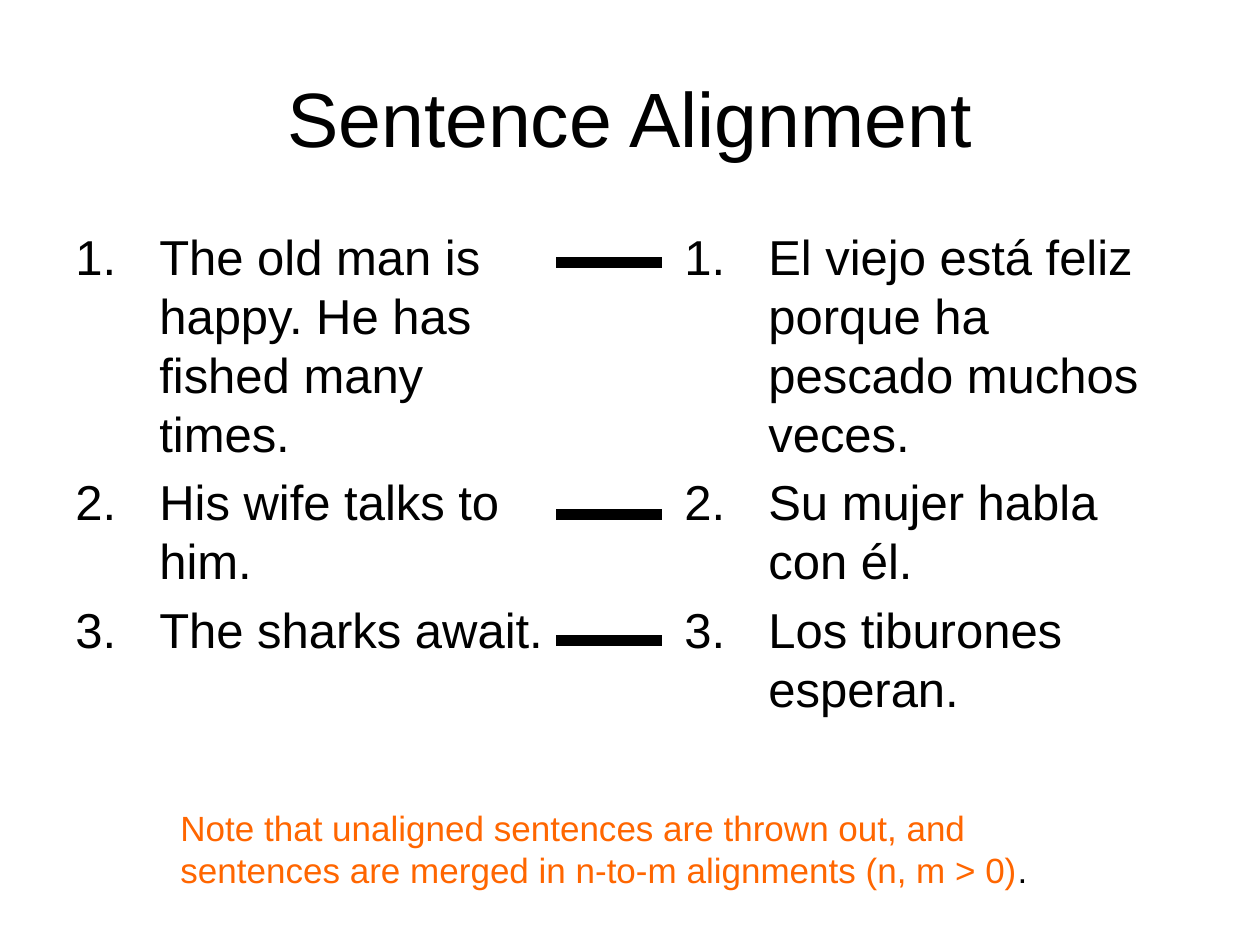
from lxml import etree
from pptx import Presentation
from pptx.dml.color import RGBColor
from pptx.enum.shapes import MSO_CONNECTOR
from pptx.enum.text import MSO_ANCHOR, PP_ALIGN
from pptx.oxml.ns import qn
from pptx.util import Pt

STRAIGHT = MSO_CONNECTOR.STRAIGHT
TOP, MIDDLE = MSO_ANCHOR.TOP, MSO_ANCHOR.MIDDLE
LEFT, CENTER = PP_ALIGN.LEFT, PP_ALIGN.CENTER
FONT, BLACK, ORANGE = "Arial", "000000", "FF6600"

# Content: each paragraph is a list of (text, colour) runs
TITLE = [[("Sentence Alignment", BLACK)]]
ENGLISH = [
    "The old man is happy. He has fished many times.",
    "His wife talks to him.",
    "The sharks await.",
]
SPANISH = [
    "El viejo está feliz porque ha pescado muchos veces.",
    "Su mujer habla con él.",
    "Los tiburones esperan.",
]
NOTE = [
    [("Note that unaligned sentences are thrown out, and", ORANGE)],
    [("sentences are merged in n-to-m alignments (n, m > 0)", ORANGE), (".", BLACK)],
]

# Layout in points
LIST_TOP, LIST_WIDTH, LIST_HEIGHT = 126, 288, 356.4
LIST_SIZE, LIST_INDENT = 28, 48
COLUMNS = [(36, ENGLISH), (384, SPANISH)]
LINK_LEFT, LINK_RIGHT = 318, 378
LINK_HEIGHTS = [150, 294, 366]


def color(hex_string):
    return RGBColor.from_string(hex_string)


def add_text(slide, box, paragraphs, size, align=LEFT, anchor=TOP, wrap=True):
    shape = slide.shapes.add_textbox(*map(Pt, box))
    frame = shape.text_frame
    frame.word_wrap = wrap
    frame.vertical_anchor = anchor
    for index, runs in enumerate(paragraphs):
        paragraph = frame.paragraphs[0] if index == 0 else frame.add_paragraph()
        paragraph.alignment = align
        for text, run_color in runs:
            run = paragraph.add_run()
            run.text = text
            run.font.name = FONT
            run.font.size = Pt(size)
            run.font.color.rgb = color(run_color)
    return frame


def add_numbered_list(slide, left, sentences):
    box = (left, LIST_TOP, LIST_WIDTH, LIST_HEIGHT)
    frame = add_text(slide, box, [[(text, BLACK)] for text in sentences], LIST_SIZE)
    for paragraph in frame.paragraphs:
        paragraph.space_before = Pt(0.2 * LIST_SIZE)
        properties = paragraph._p.get_or_add_pPr()
        properties.set("marL", str(Pt(LIST_INDENT)))
        properties.set("indent", str(-Pt(LIST_INDENT)))
        etree.SubElement(properties, qn("a:buFont"), typeface=FONT)
        etree.SubElement(properties, qn("a:buAutoNum"), type="arabicPeriod")


def add_link(slide, height):
    link = slide.shapes.add_connector(
        STRAIGHT, Pt(LINK_LEFT), Pt(height), Pt(LINK_RIGHT), Pt(height))
    link.line.color.rgb = color(BLACK)
    link.line.width = Pt(6)
    etree.SubElement(link._element.spPr, qn("a:effectLst"))


presentation = Presentation()
presentation.slide_width, presentation.slide_height = Pt(720), Pt(540)
slide = presentation.slides.add_slide(presentation.slide_layouts[6])

# Title
add_text(slide, (36, 21.6, 648, 90), TITLE, 44, CENTER, MIDDLE)

# Sentence lists in both languages
for left, sentences in COLUMNS:
    add_numbered_list(slide, left, sentences)

# Links between aligned sentences
for height in LINK_HEIGHTS:
    add_link(slide, height)

# Note
add_text(slide, (96, 457.2, 502.5, 55.5), NOTE, 20, wrap=False)

presentation.save("out.pptx")
